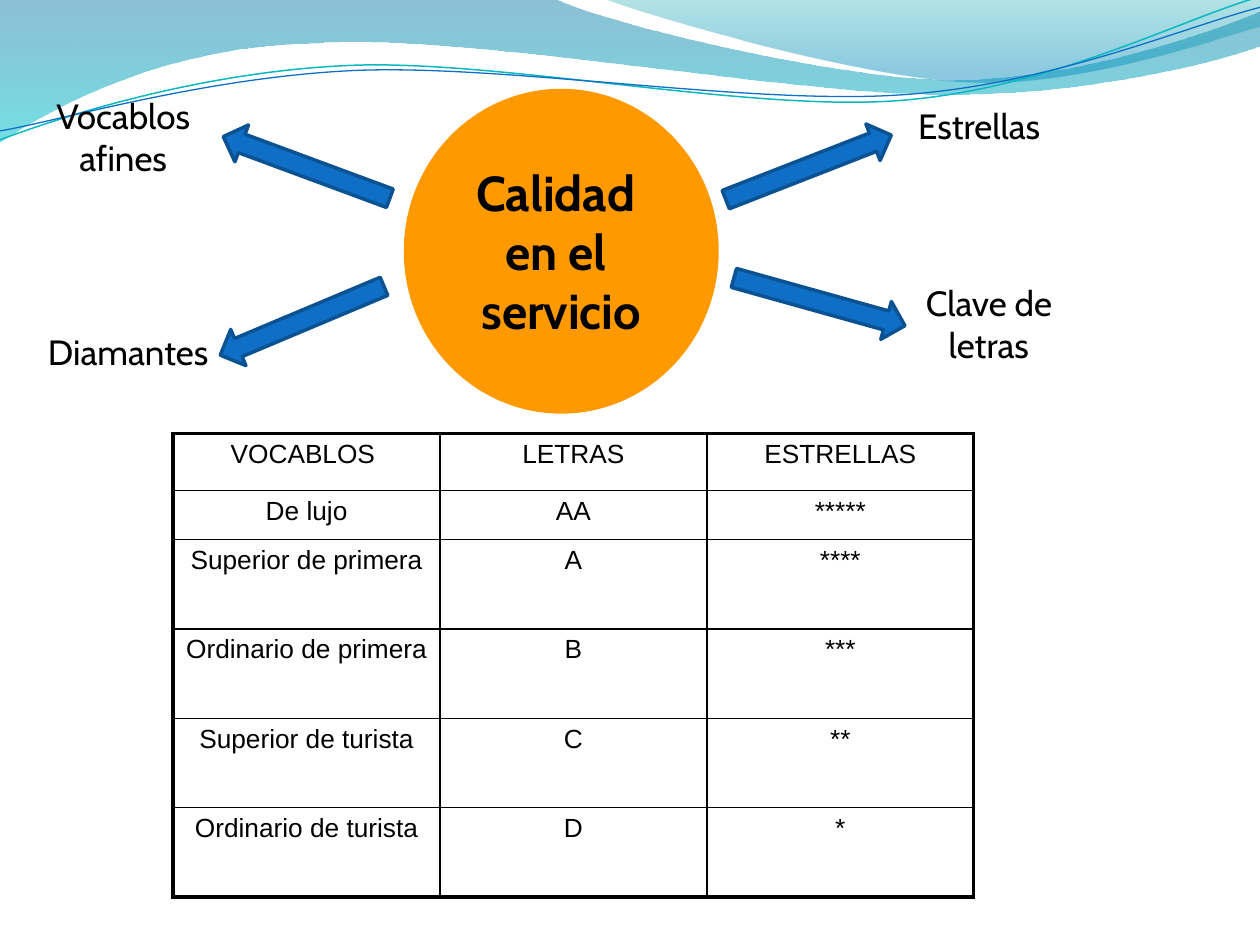
from lxml.etree import SubElement
from pptx import Presentation
from pptx.dml.color import RGBColor
from pptx.enum.shapes import MSO_SHAPE
from pptx.enum.text import MSO_ANCHOR, PP_ALIGN
from pptx.oxml.ns import qn
from pptx.util import Cm, Pt

# All lengths are in centimetres. A path starts at a point; each later item is
# one point (straight line) or three points (cubic curve).
BANDS = [
    ([(0, 0), [(11.18, -0.03)],
      [(12.09, 0.43), (16.87, 1.6), (19.25, 1.6)],
      [(21.67, 1.6), (24.33, 0.66), (25.4, 0.23)],
      [(25.43, 0.91)],
      [(24.97, 1.12), (22.1, 1.93), (18.95, 1.9)],
      [(15.8, 1.9), (9.7, 0.71), (6.53, 0.86)],
      [(3.28, 0.91), (1.17, 2.11), (-0.03, 2.87)],
      [(0, 0)]],
     [(0, "0074A1", 45), (1, "00C6CF", 55)]),
    ([(12.17, -0.03),
      [(12.93, 0.28), (17.32, 1.57), (19.53, 1.65)],
      [(21.74, 1.75), (24.41, 0.81), (25.4, 0.53)],
      [(25.4, 0)], [(12.17, -0.03)]],
     [(0, "00A1A9", 30), (0.8, "008BBF", 45)]),
]
WAVES = [
    ([(0, 2.82),
      [(1.22, 2.36), (4.01, 1.45), (7.04, 1.32)],
      [(10.03, 1.19), (15.06, 2.26), (18.11, 2.03)],
      [(21.16, 1.8), (23.83, 0.38), (25.35, -0.05)]], "0AB8BF", 0.85),
    ([(0, 2.64),
      [(1.19, 2.44), (4.17, 1.55), (7.19, 1.42)],
      [(10.24, 1.3), (15.16, 2.13), (18.21, 1.91)],
      [(21.23, 1.7), (23.9, 0.53), (25.4, 0.15)]], "0F6FC6", 0.75),
]
TOPIC = "Calidad \nen el \nservicio"
TOPIC_BOX = (8.14, 1.79, 6.35, 6.55)
LABELS = [
    ("Estrellas", (17.86, 1.98, 3.76, 1.09)),
    ("Diamantes", (0.4, 6.54, 4.37, 1.09)),
    ("Clave de letras", (17.65, 5.55, 4.57, 1.96)),
    ("Vocablos afines", (0.2, 1.78, 4.57, 1.96)),
]
ARROWS = [  # left, top, rotation
    (14.51, 2.98, 338.7),
    (14.73, 5.69, 15.6),
    (4.3, 6.07, 157.2),
    (4.39, 2.98, 200.3),
]
ARROW_SIZE = (3.58, 0.79)
CATEGORIES = [
    ("VOCABLOS ", "LETRAS", "ESTRELLAS"),
    ("De lujo", "AA", "*****"),
    ("Superior de primera", "A", "****"),
    ("Ordinario de primera", "B", "***"),
    ("Superior de turista", "C", "**"),
    ("Ordinario de turista", "D", "*"),
]
TABLE_AT = (3.49, 8.74)
COL_WIDTH = 5.38
ROW_HEIGHTS = [1.15, 0.99] + [1.8] * 4
THIN, THICK = 1, 2.25


def rgb(color):
    return RGBColor.from_string(color)


def cm(values):
    return [Cm(v) for v in values]


def add_path(s, path, close):
    """Draw the path through all its points, then turn each triple into a curve."""
    start, *parts = path
    builder = s.shapes.build_freeform(*cm(start))
    builder.add_line_segments([cm(pt) for part in parts for pt in part], close=close)
    sp = builder.convert_to_shape()
    sp.shadow.inherit = False
    lines = iter(list(sp._element.spPr.iter(qn("a:lnTo"))))
    for part in parts:
        nodes = [next(lines) for _ in part]
        if len(nodes) == 3:
            outline = nodes[0].getparent()
            curve = SubElement(outline, qn("a:cubicBezTo"))
            outline.replace(nodes[0], curve)
            for node in nodes:
                curve.append(node[0])
            for node in nodes[1:]:
                outline.remove(node)
    return sp


def add_band(s, path, stops):
    sp = add_path(s, path, True)
    sp.line.fill.background()
    sp.fill.gradient()
    sp.fill.gradient_angle = 270
    for stop, (position, color, _) in zip(sp.fill.gradient_stops, stops):
        stop.position = position
        stop.color.rgb = rgb(color)
    for node, (_, _, opacity) in zip(sp._element.spPr.iter(qn("a:srgbClr")), stops):
        SubElement(node, qn("a:alpha"), val=str(opacity * 1000))


def add_wave(s, path, color, width):
    sp = add_path(s, path, False)
    sp.fill.background()
    sp.line.color.rgb = rgb(color)
    sp.line.width = Pt(width)


def write(tf, text, font, size, bold=False):
    tf.text = text
    for p in tf.paragraphs:
        p.alignment = PP_ALIGN.CENTER
        for r in p.runs:
            r.font.name = font
            r.font.size = Pt(size)
            r.font.bold = bold
            r.font.color.rgb = rgb("000000")


def add_topic(s):
    sp = s.shapes.add_shape(MSO_SHAPE.OVAL, *cm(TOPIC_BOX))
    sp.shadow.inherit = False
    sp.fill.solid()
    sp.fill.fore_color.rgb = rgb("FF9900")
    sp.line.fill.background()
    sp.text_frame.word_wrap = False
    sp.text_frame.vertical_anchor = MSO_ANCHOR.MIDDLE
    write(sp.text_frame, TOPIC, "Cabin", 28, True)


def add_label(s, text, box):
    tf = s.shapes.add_textbox(*cm(box)).text_frame
    tf.word_wrap = True
    write(tf, text, "Cabin", 20)


def add_arrow(s, left, top, rotation):
    sp = s.shapes.add_shape(MSO_SHAPE.RIGHT_ARROW, *cm((left, top, *ARROW_SIZE)))
    sp.shadow.inherit = False
    sp.rotation = rotation
    sp.fill.solid()
    sp.fill.fore_color.rgb = rgb("0F6FC6")
    sp.line.color.rgb = rgb("0B5292")
    sp.line.width = Pt(2)


def set_borders(cell, widths):
    """Draw black borders; widths are left, right, top, bottom in points."""
    tc_pr = cell._tc.get_or_add_tcPr()
    for side, width in zip("LRTB", widths):
        line = SubElement(tc_pr, qn(f"a:ln{side}"), w=str(Pt(width)))
        SubElement(SubElement(line, qn("a:solidFill")), qn("a:srgbClr"), val="000000")


def add_categories(s):
    rows, cols = len(CATEGORIES), len(CATEGORIES[0])
    size = (COL_WIDTH * cols, sum(ROW_HEIGHTS))
    table = s.shapes.add_table(rows, cols, *cm(TABLE_AT + size)).table
    table.first_row = table.horz_banding = False
    for column in table.columns:
        column.width = Cm(COL_WIDTH)
    for i, texts in enumerate(CATEGORIES):
        table.rows[i].height = Cm(ROW_HEIGHTS[i])
        for j, text in enumerate(texts):
            cell = table.cell(i, j)
            write(cell.text_frame, text, "Arial", 15)
            outer = (j == 0, j == cols - 1, i == 0, i == rows - 1)
            set_borders(cell, [THICK if edge else THIN for edge in outer])
            cell.fill.background()


def main():
    prs = Presentation()
    prs.slide_width, prs.slide_height = Cm(25.4), Cm(19.05)
    s = prs.slides.add_slide(prs.slide_layouts[6])
    for band in BANDS:
        add_band(s, *band)
    for wave in WAVES:
        add_wave(s, *wave)
    add_topic(s)
    for label in LABELS:
        add_label(s, *label)
    add_categories(s)
    for arrow in ARROWS:
        add_arrow(s, *arrow)
    prs.save("out.pptx")


if __name__ == "__main__":
    main()
